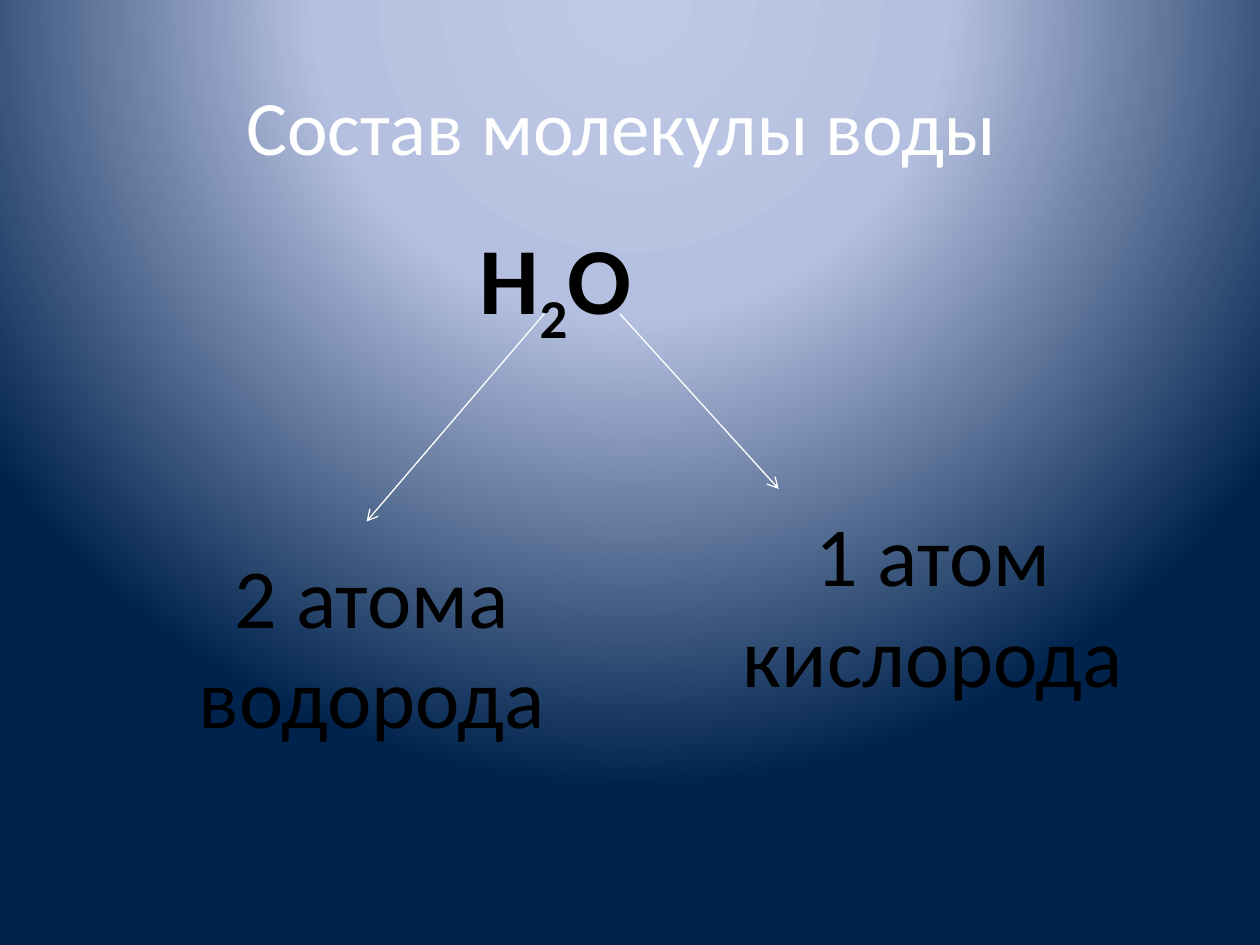
from lxml import etree
from pptx import Presentation
from pptx import util as u
from pptx.dml.color import RGBColor
from pptx.enum import shapes, text
from pptx.oxml import ns, parse_xml

WHITE = RGBColor(0xFF, 0xFF, 0xFF)
BLACK = RGBColor(0x00, 0x00, 0x00)
PALE = RGBColor(0xBF, 0xC9, 0xE5)
LIGHT = RGBColor(0xB5, 0xC0, 0xE0)
NAVY = RGBColor(0x00, 0x23, 0x4D)


class SlideBuilder:
    font = "Calibri"
    line_width = 0.75

    def __init__(self, slide):
        self.slide = slide

    def background(self, stops):
        """Radial gradient centred above the slide; stops are (percent, colour)."""
        fill = self.slide.background.fill
        fill.solid()
        solid = self.slide.element.find(".//" + ns.qn("p:bgPr") + "/" + ns.qn("a:solidFill"))
        stop_xml = "".join(
            f'<a:gs pos="{percent * 1000}"><a:srgbClr val="{colour}"/></a:gs>'
            for percent, colour in stops)
        gradient = parse_xml(
            f'<a:gradFill {ns.nsdecls("a")} rotWithShape="1">'
            f'<a:gsLst>{stop_xml}</a:gsLst><a:path path="circle">'
            '<a:fillToRect l="50000" t="-80000" r="50000" b="180000"/>'
            '</a:path></a:gradFill>')
        solid.getparent().replace(solid, gradient)

    def set_text(self, shape, runs, anchor, **style):
        """Fill a shape with one centred paragraph of (text, baseline) runs."""
        frame = shape.text_frame
        frame.word_wrap = True
        frame.vertical_anchor = anchor
        paragraph = frame.paragraphs[0]
        paragraph.alignment = text.PP_ALIGN.CENTER
        colour = style.pop("colour", BLACK)
        for words, baseline in runs:
            run = paragraph.add_run()
            run.text = words
            for name, value in {"name": self.font, **style}.items():
                setattr(run.font, name, value)
            run.font.color.rgb = colour
            if baseline:
                run._r.get_or_add_rPr().set("baseline", str(baseline * 1000))

    def title(self, words, box, **style):
        shape = self.slide.shapes.title
        for name, value in zip(("left", "top", "width", "height"), box):
            setattr(shape, name, u.Pt(value))
        self.set_text(shape, [(words, 0)], text.MSO_ANCHOR.MIDDLE, **style)

    def label(self, runs, box, **style):
        shape = self.slide.shapes.add_textbox(*map(u.Pt, box))
        self.set_text(shape, runs, text.MSO_ANCHOR.TOP, **style)
        shape.text_frame.auto_size = text.MSO_AUTO_SIZE.SHAPE_TO_FIT_TEXT

    def arrow(self, start, end):
        connector = self.slide.shapes.add_connector(
            shapes.MSO_CONNECTOR.STRAIGHT, *map(u.Pt, start + end))
        connector.line.color.rgb = WHITE
        connector.line.width = u.Pt(self.line_width)
        properties = connector._element.spPr
        line = properties.find(ns.qn("a:ln"))
        etree.SubElement(line, ns.qn("a:tailEnd"), type="arrow")
        etree.SubElement(properties, ns.qn("a:effectLst"))


def main():
    presentation = Presentation()
    presentation.slide_width, presentation.slide_height = u.Pt(720), u.Pt(540)
    slide = presentation.slides.add_slide(presentation.slide_layouts[5])
    builder = SlideBuilder(slide)

    # Background and title
    builder.background([(0, PALE), (40, LIGHT), (100, NAVY)])
    builder.title("Состав молекулы воды", (31, 26, 648, 90),
                  size=u.Pt(44), colour=WHITE)

    # Formula with a subscript
    builder.label([("Н", 0), ("2", -25), ("О", 0)], (190, 122.4, 255, 94.3),
                  size=u.Pt(54), bold=True)

    # Arrows from the formula to its atoms
    builder.arrow((311, 179.3), (209.5, 298))
    builder.arrow((354.2, 179.3), (445, 279.4))

    # Atom labels
    for words, box in (("2 атома водорода", (70.6, 307.4, 283.7, 123.8)),
                       ("1 атом кислорода", (416.9, 283.7, 232.6, 123.8))):
        builder.label([(words, 0)], box, size=u.Pt(48))

    presentation.save("out.pptx")


if __name__ == "__main__":
    main()
